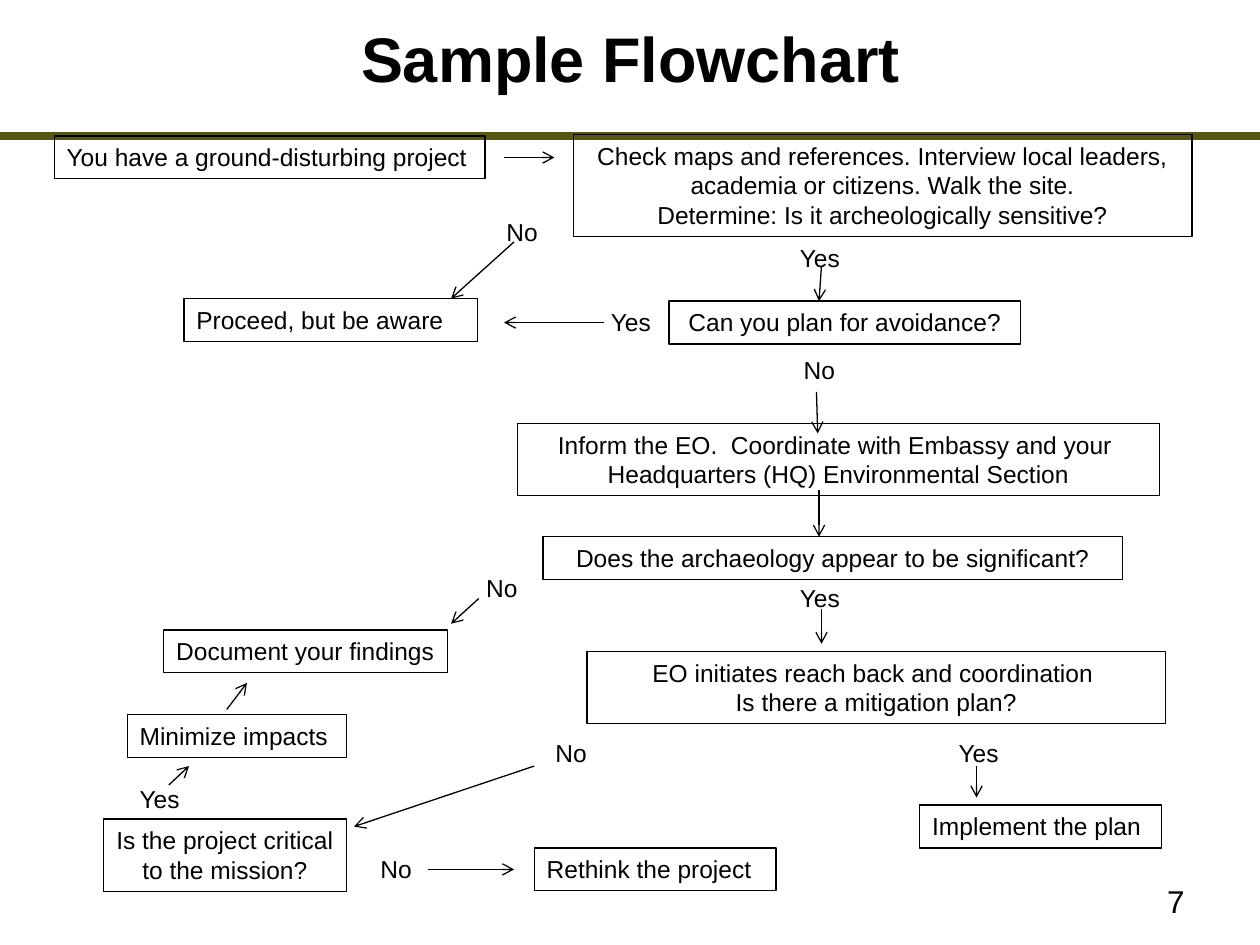
from lxml import etree
from pptx import Presentation
from pptx.dml.color import RGBColor
from pptx.enum.shapes import MSO_CONNECTOR, MSO_SHAPE
from pptx.enum.text import MSO_ANCHOR, MSO_AUTO_SIZE, PP_ALIGN
from pptx.oxml.ns import qn
from pptx.util import Inches, Pt

LEFT, CENTER, RIGHT = PP_ALIGN.LEFT, PP_ALIGN.CENTER, PP_ALIGN.RIGHT
TOP, MIDDLE = MSO_ANCHOR.TOP, MSO_ANCHOR.MIDDLE
GROW, FIXED = MSO_AUTO_SIZE.SHAPE_TO_FIT_TEXT, MSO_AUTO_SIZE.NONE
RECT, LINE = MSO_SHAPE.RECTANGLE, MSO_CONNECTOR.STRAIGHT

COLORS = {"ink": "000000", "rule": "545612"}
COLS, ROWS = 100, 75
UNIT = Inches(10) // COLS
LINE_H, EXTRA_H = 3.4, 2.35  # rows for the first line and each further one
LABEL_W = {"Yes": 6.7, "No": 4.8}

# column, row, width, lines, alignment, text
STEPS = [
    (4.3, 10.8, 34.2, 1, LEFT, "You have a ground-disturbing project"),
    (45.5, 10.7, 49.1, 3, CENTER,
     "Check maps and references. Interview local leaders, academia or citizens. "
     "Walk the site.\nDetermine: Is it archeologically sensitive?"),
    (14.6, 23.7, 23.3, 1, LEFT, "Proceed, but be aware"),
    (53.1, 23.9, 27.9, 1, CENTER, "Can you plan for avoidance?"),
    (41.1, 33.6, 50.9, 2, CENTER,
     "Inform the EO.  Coordinate with Embassy and your \v"
     "Headquarters (HQ) Environmental Section"),
    (43.1, 42.6, 46, 1, CENTER, "Does the archaeology appear to be significant?"),
    (13, 50, 22.5, 1, LEFT, "Document your findings"),
    (46.6, 51.7, 45.9, 2, CENTER,
     "EO initiates reach back and coordination \nIs there a mitigation plan?"),
    (10.1, 56.7, 17.4, 1, LEFT, "Minimize impacts"),
    (8.2, 65, 19.3, 2, CENTER, "Is the project critical to the mission?"),
    (73, 63.9, 19.2, 1, LEFT, "Implement the plan"),
    (42.4, 67.3, 19.2, 1, LEFT, "Rethink the project"),
]

# column, row of each answer
ANSWERS = {
    "Yes": [(62.5, 18.8), (47.5, 23.9), (62.5, 45.8), (10.1, 61.7), (75.1, 58.1)],
    "No": [(39.2, 16.7), (62.8, 27.7), (37.6, 45), (43.1, 58.1), (29.2, 67.3)],
}

# from column, row to column, row
ARROWS = [
    (40, 12.5, 44, 12.5), (40.8, 19.2, 35.8, 23.7), (65.2, 21.1, 65, 23.9),
    (47.9, 25.6, 40, 25.6), (64.8, 31.1, 64.9, 34.4), (65, 38.9, 65, 42.6),
    (38, 47.5, 35.8, 49.5), (65.2, 48.3, 65.2, 51.1), (18, 56.3, 19.6, 54.2),
    (13.4, 62.3, 15, 60.8), (42.4, 60.8, 28.1, 65.6), (77.5, 60.8, 77.5, 63.3),
    (34, 69, 40.8, 69),
]


def grid(*cells):
    return [round(cell * UNIT) for cell in cells]


def color(name):
    return RGBColor.from_string(COLORS[name])


def write(shape, text, size=14, align=LEFT, anchor=TOP, fit=GROW, bold=False):
    frame = shape.text_frame
    frame.text = text
    frame.word_wrap = True
    frame.auto_size = fit
    frame.vertical_anchor = anchor
    for para in frame.paragraphs:
        para.alignment = align
        for run in para.runs:
            run.font.name = "Arial"
            run.font.size = Pt(size)
            run.font.bold = bold
            run.font.color.rgb = color("ink")


def add_text(slide, x, y, w, h, text, **style):
    write(slide.shapes.add_textbox(*grid(x, y, w, h)), text, **style)


def add_step(slide, x, y, w, lines, align, text):
    h = LINE_H + EXTRA_H * (lines - 1)
    box = slide.shapes.add_shape(RECT, *grid(x, y, w, h))
    box.shadow.inherit = False
    box.fill.background()
    box.line.color.rgb = color("ink")
    box.line.width = Pt(0.75)
    write(box, text, align=align)


def add_line(slide, ends, name="ink", width=0.75):
    line = slide.shapes.add_connector(LINE, *grid(*ends))
    line.line.color.rgb = color(name)
    line.line.width = Pt(width)
    etree.SubElement(line._element.spPr, qn("a:effectLst"))
    return line


def add_arrow(slide, ends):
    line = add_line(slide, ends)
    etree.SubElement(line.line._get_or_add_ln(), qn("a:tailEnd"), type="arrow")


def main():
    deck = Presentation()
    deck.slide_width, deck.slide_height = grid(COLS, ROWS)
    slide = deck.slides.add_slide(deck.slide_layouts[6])
    add_line(slide, (0, 10.8, COLS, 10.8), "rule", 4.5)
    add_text(slide, 11.7, 0.8, 76.7, 7.5, "Sample Flowchart", size=36,
             align=CENTER, anchor=MIDDLE, fit=FIXED, bold=True)
    for step in STEPS:
        add_step(slide, *step)
    for word, spots in ANSWERS.items():
        for x, y in spots:
            add_text(slide, x, y, LABEL_W[word], LINE_H, word)
    for ends in ARROWS:
        add_arrow(slide, ends)
    add_text(slide, 71.7, 69.5, 23.3, 4, "7", size=18, align=RIGHT, fit=FIXED)
    deck.save("out.pptx")


if __name__ == "__main__":
    main()
